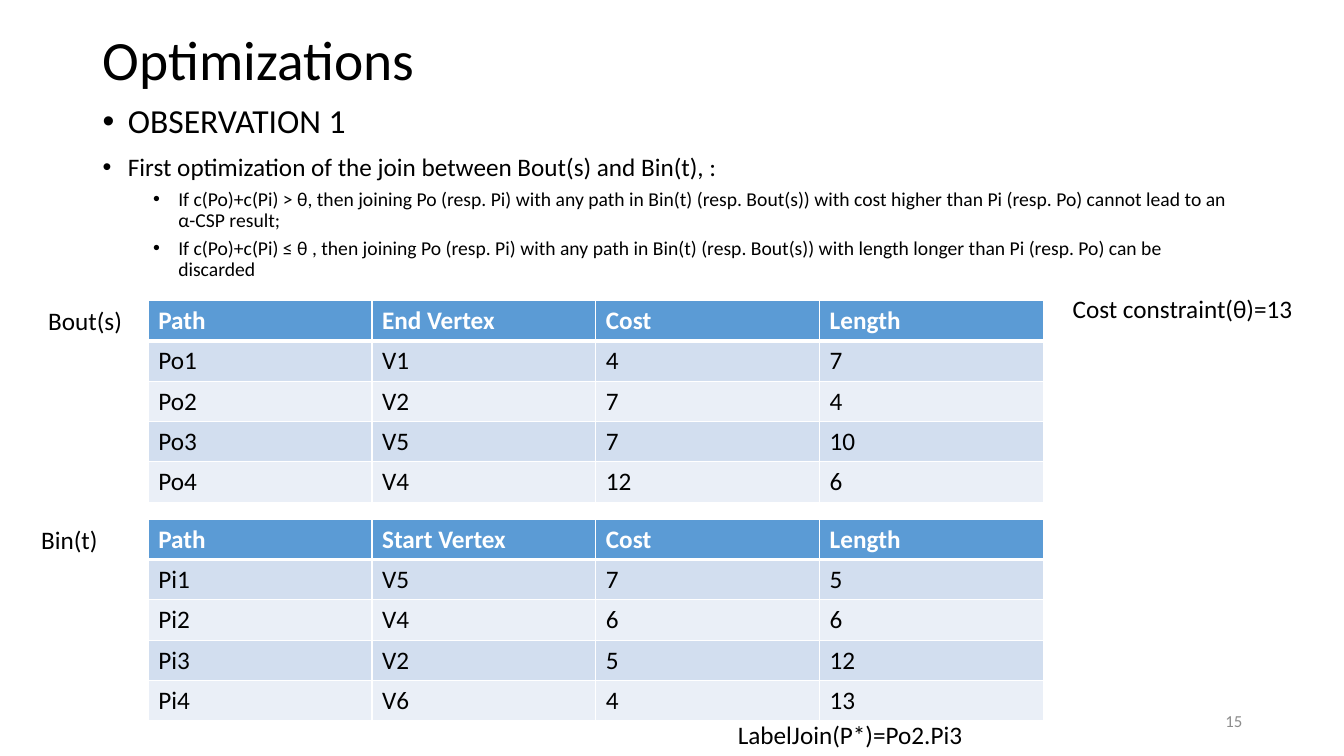
from dataclasses import dataclass

from lxml.etree import SubElement
from pptx import Presentation
from pptx.dml.color import RGBColor
from pptx.enum.text import MSO_ANCHOR, PP_ALIGN
from pptx.oxml.ns import qn
from pptx.slide import Slide
from pptx.table import _Cell
from pptx.text.text import _Paragraph
from pptx.util import Inches, Pt

FONT = "Calibri"
BLACK = RGBColor(0x00, 0x00, 0x00)
WHITE = RGBColor(0xFF, 0xFF, 0xFF)
GRAY = RGBColor(0x8C, 0x8C, 0x8C)
HEADER_BLUE = RGBColor(0x5B, 0x9B, 0xD5)
ODD_ROW = RGBColor(0xD2, 0xDE, 0xEF)
EVEN_ROW = RGBColor(0xEA, 0xEF, 0xF7)

TABLE_LEFT = 1.47
COLUMN_WIDTH = 2.22
ROW_HEIGHT = 0.4


@dataclass(frozen=True)
class Label:
    text: str
    left: float
    top: float
    width: float
    height: float = 0.4
    size: float = 18
    color: RGBColor = BLACK
    align: PP_ALIGN = PP_ALIGN.LEFT
    anchor: MSO_ANCHOR = MSO_ANCHOR.TOP
    line_spacing: float = 1.0


@dataclass(frozen=True)
class Bullet:
    text: str
    size: float
    level: int = 0


@dataclass(frozen=True)
class PathTable:
    top: float
    rows: list[list[str]]


LABELS = [
    Label("Optimizations", 0.92, 0.25, 11.5, 0.74, size=39.6,
          anchor=MSO_ANCHOR.MIDDLE, line_spacing=0.9),
    Label("15", 9.42, 6.95, 3, size=12, color=GRAY,
          align=PP_ALIGN.RIGHT, anchor=MSO_ANCHOR.MIDDLE),
    Label("Bout(s)", 0.38, 2.98, 0.97),
    Label("Bin(t)", 0.31, 5.15, 0.89),
    Label("Cost constraint(θ)=13", 10.54, 2.86, 2.43),
    Label("LabelJoin(P*)=Po2.Pi3", 7.22, 7.09, 2.96),
]

BULLETS = [
    Bullet("OBSERVATION 1", 24),
    Bullet("First optimization of the join between Bout(s) and Bin(t), :", 18),
    Bullet("If c(Po)+c(Pi) > θ, then joining Po (resp. Pi) with any path in Bin(t) "
           "(resp. Bout(s)) with cost higher than Pi (resp. Po) cannot lead to an "
           "α-CSP result;", 14, level=1),
    Bullet("If c(Po)+c(Pi) ≤ θ , then joining Po (resp. Pi) with any path in Bin(t) "
           "(resp. Bout(s)) with length longer than Pi (resp. Po) can be discarded",
           14, level=1),
]

TABLES = [
    PathTable(2.98, [
        ["Path", "End Vertex", "Cost", "Length"],
        ["Po1", "V1", "4", "7"],
        ["Po2", "V2", "7", "4"],
        ["Po3", "V5", "7", "10"],
        ["Po4", "V4", "12", "6"],
    ]),
    PathTable(5.15, [
        ["Path", "Start Vertex", "Cost", "Length"],
        ["Pi1", "V5", "7", "5"],
        ["Pi2", "V4", "6", "6"],
        ["Pi3", "V2", "5", "12"],
        ["Pi4", "V6", "4", "13"],
    ]),
]


def set_text(para: _Paragraph, text: str, size: float, color: RGBColor = BLACK) -> None:
    para.text = text
    para.font.name = FONT
    para.font.size = Pt(size)
    para.font.color.rgb = color


def add_label(page: Slide, label: Label) -> None:
    box = page.shapes.add_textbox(Inches(label.left), Inches(label.top),
                                  Inches(label.width), Inches(label.height))
    frame = box.text_frame
    frame.word_wrap = True
    frame.vertical_anchor = label.anchor
    para = frame.paragraphs[0]
    set_text(para, label.text, label.size, label.color)
    para.alignment = label.align
    para.line_spacing = label.line_spacing


def add_bullets(page: Slide, bullets: list[Bullet]) -> None:
    box = page.shapes.add_textbox(Inches(0.92), Inches(0.99), Inches(11.5), Inches(6.36))
    frame = box.text_frame
    frame.word_wrap = True
    for index, bullet in enumerate(bullets):
        para = frame.add_paragraph() if index else frame.paragraphs[0]
        set_text(para, bullet.text, bullet.size)
        para.level = bullet.level
        para.line_spacing = 0.9
        para.space_before = Pt(5 if bullet.level else 10)
        properties = para._p.get_or_add_pPr()
        properties.set("marL", str(Inches(0.25 + 0.5 * bullet.level)))
        properties.set("indent", str(Inches(-0.25)))
        SubElement(properties, qn("a:buFont"), typeface="Arial")
        SubElement(properties, qn("a:buChar"), char="•")


def set_borders(cell: _Cell, top: float, bottom: float) -> None:
    """Draw white cell borders; top and bottom are widths in points."""
    properties = cell._tc.get_or_add_tcPr()
    for side, width in (("L", 1), ("R", 1), ("T", top), ("B", bottom)):
        line = SubElement(properties, qn(f"a:ln{side}"), w=str(Pt(width)))
        fill = SubElement(line, qn("a:solidFill"))
        SubElement(fill, qn("a:srgbClr"), val=str(WHITE))


def add_path_table(page: Slide, data: PathTable) -> None:
    row_count, column_count = len(data.rows), len(data.rows[0])
    table = page.shapes.add_table(
        row_count, column_count, Inches(TABLE_LEFT), Inches(data.top),
        Inches(COLUMN_WIDTH * column_count), Inches(ROW_HEIGHT * row_count)).table
    for row_index, row in enumerate(data.rows):
        is_header = row_index == 0
        row_color = ODD_ROW if row_index % 2 else EVEN_ROW
        for column_index, text in enumerate(row):
            cell = table.cell(row_index, column_index)
            set_borders(cell, top=3 if row_index == 1 else 1, bottom=3 if is_header else 1)
            cell.fill.solid()
            cell.fill.fore_color.rgb = HEADER_BLUE if is_header else row_color
            para = cell.text_frame.paragraphs[0]
            set_text(para, text, 18, WHITE if is_header else BLACK)
            para.font.bold = is_header


def main() -> None:
    deck = Presentation()
    deck.slide_width = Inches(13.33)
    deck.slide_height = Inches(7.5)
    page = deck.slides.add_slide(deck.slide_layouts[6])
    add_bullets(page, BULLETS)
    for table in TABLES:
        add_path_table(page, table)
    for label in LABELS:
        add_label(page, label)
    deck.save("out.pptx")


if __name__ == "__main__":
    main()
